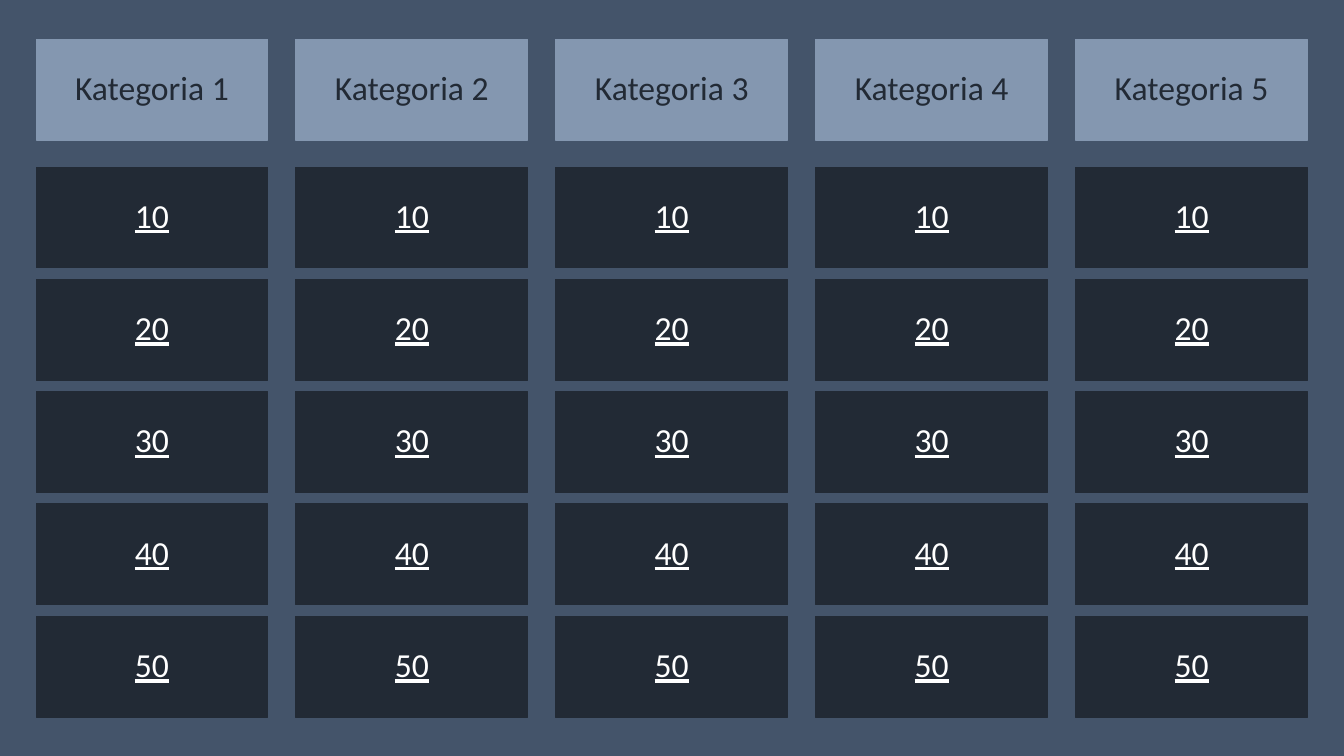
from dataclasses import dataclass

from pptx import Presentation
from pptx.dml.color import RGBColor
from pptx.enum.shapes import MSO_SHAPE
from pptx.enum.text import MSO_ANCHOR, PP_ALIGN
from pptx.util import Cm, Pt


@dataclass(frozen=True)
class Theme:
    back: str = "44546A"
    head: str = "8497B0"
    dark: str = "222A35"
    light: str = "FFFFFF"
    font: str = "Calibri"
    size: int = 24
    line: float = 0.75


class Board:
    def __init__(self, slide, theme):
        self.slide = slide
        self.theme = theme

    def paint(self, color):
        fill = self.slide.background.fill
        fill.solid()
        fill.fore_color.rgb = RGBColor.from_string(color)

    def tile(self, text, left, top, fill, ink, under=False):
        box = self.slide.shapes.add_shape(
            MSO_SHAPE.RECTANGLE, Cm(left), Cm(top), Cm(WIDTH), Cm(HEIGHT))
        box.shadow.inherit = False
        box.fill.solid()
        box.fill.fore_color.rgb = box.line.color.rgb = RGBColor.from_string(fill)
        box.line.width = Pt(self.theme.line)
        frame = box.text_frame
        frame.word_wrap = True
        frame.vertical_anchor = MSO_ANCHOR.MIDDLE
        para = frame.paragraphs[0]
        para.alignment = PP_ALIGN.CENTER
        para.line_spacing = 0.9
        run = para.add_run()
        run.text = text
        run.font.color.rgb = RGBColor.from_string(ink)
        style = {"name": self.theme.font, "size": Pt(self.theme.size), "underline": under}
        for key, value in style.items():
            setattr(run.font, key, value)

    def title(self, text, left):
        self.tile(text, left, HEAD_TOP, self.theme.head, self.theme.dark)

    def score(self, text, left, top):
        self.tile(text, left, top, self.theme.dark, self.theme.light, under=True)


WIDTH, HEIGHT = 5.84, 2.54
LEFT, COL_STEP = 0.91, 6.55
HEAD_TOP, TOP, ROW_STEP = 0.99, 4.21, 2.83
COLS, ROWS = 5, 5


def main():
    deck = Presentation()
    deck.slide_width, deck.slide_height = Cm(33.87), Cm(19.05)
    theme = Theme()
    board = Board(deck.slides.add_slide(deck.slide_layouts[6]), theme)
    board.paint(theme.back)
    for col in range(COLS):
        left = LEFT + col * COL_STEP
        board.title(f"Kategoria {col + 1}", left)
        for row in range(ROWS):
            board.score(str(10 * (row + 1)), left, TOP + row * ROW_STEP)
    deck.save("out.pptx")


if __name__ == "__main__":
    main()
